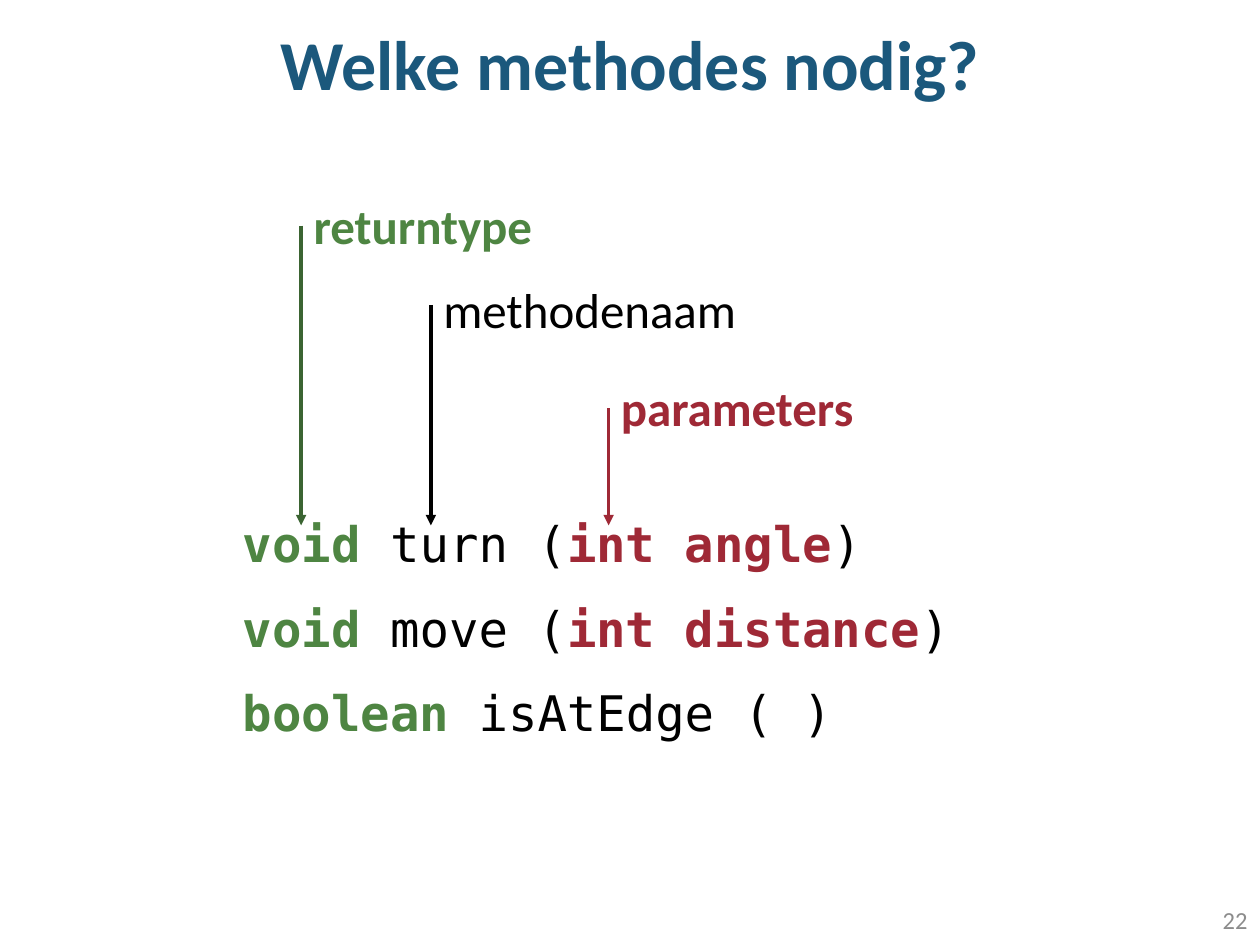
from lxml import etree
from pptx import Presentation
from pptx.dml.color import RGBColor
from pptx.enum.shapes import MSO_CONNECTOR
from pptx.enum.text import MSO_ANCHOR, PP_ALIGN
from pptx.oxml.ns import qn
from pptx.util import Inches, Pt

STRAIGHT = MSO_CONNECTOR.STRAIGHT
TOP, MIDDLE = MSO_ANCHOR.TOP, MSO_ANCHOR.MIDDLE
LEFT, CENTER, RIGHT = PP_ALIGN.LEFT, PP_ALIGN.CENTER, PP_ALIGN.RIGHT
BLUE, GREEN, DARK_GREEN = "1B587C", "4E8542", "3B6432"
RED, BLACK, GREY = "9F2936", "000000", "8C8C8C"


def rgb(value):
    return RGBColor.from_string(value)


def add_text(box, lines, size, font="Calibri", align=LEFT, anchor=TOP,
             line_spacing=1.0, space_before=0):
    """Each line is a list of (text, colour, bold) runs."""
    tf = s.shapes.add_textbox(*[Inches(v) for v in box]).text_frame
    tf.word_wrap = True
    tf.vertical_anchor = anchor
    for i, line in enumerate(lines):
        p = tf.add_paragraph() if i else tf.paragraphs[0]
        p.alignment = align
        p.line_spacing = line_spacing
        p.space_before = Pt(space_before)
        for text, color, bold in line:
            r = p.add_run()
            r.text = text
            r.font.name = font
            r.font.size = Pt(size)
            r.font.bold = bold
            r.font.color.rgb = rgb(color)


prs = Presentation()
prs.slide_width, prs.slide_height = Inches(10), Inches(7.5)
s = prs.slides.add_slide(prs.slide_layouts[6])

# Title
add_text((0, 0, 10, 1.08), [[("Welke methodes nodig?", BLUE, True)]], 40,
         align=CENTER, anchor=MIDDLE, line_spacing=0.9)

# Method signatures
signatures = [
    [("void", GREEN, True), (" turn (", BLACK, False),
     ("int angle", RED, True), (")", BLACK, False)],
    [("void", GREEN, True), (" move (", BLACK, False),
     ("int distance", RED, True), (")", BLACK, False)],
    [("boolean ", GREEN, True), ("isAtEdge ( )", BLACK, False)],
]
add_text((1.83, 4.08, 7.42, 2), signatures, 28, font="DejaVu Sans Mono",
         line_spacing=0.9, space_before=18)

# Slide number
add_text((7.75, 7.1, 2.25, 0.4), [[("22", GREY, False)]], 14,
         align=RIGHT, anchor=MIDDLE)

# Labels with arrows down to the first signature
labels = [
    ("returntype", GREEN, True, 2.39, 1.5, 2.25, DARK_GREEN, 1.79),
    ("methodenaam", BLACK, False, 3.42, 2.17, 3.17, BLACK, 2.42),
    ("parameters", RED, True, 4.83, 2.95, 2.58, RED, 3.24),
]
for text, color, bold, x, y, width, line_color, start in labels:
    add_text((x, y, width, 0.57), [[(text, color, bold)]], 28)
    arrow = s.shapes.add_connector(STRAIGHT, Inches(x), Inches(start),
                                   Inches(x), Inches(4.17))
    arrow.line.color.rgb = rgb(line_color)
    arrow.line.width = Pt(2)
    ln = arrow.line._get_or_add_ln()
    etree.SubElement(ln, qn("a:tailEnd"), type="triangle")
    etree.SubElement(arrow._element.spPr, qn("a:effectLst"))

prs.save("out.pptx")
